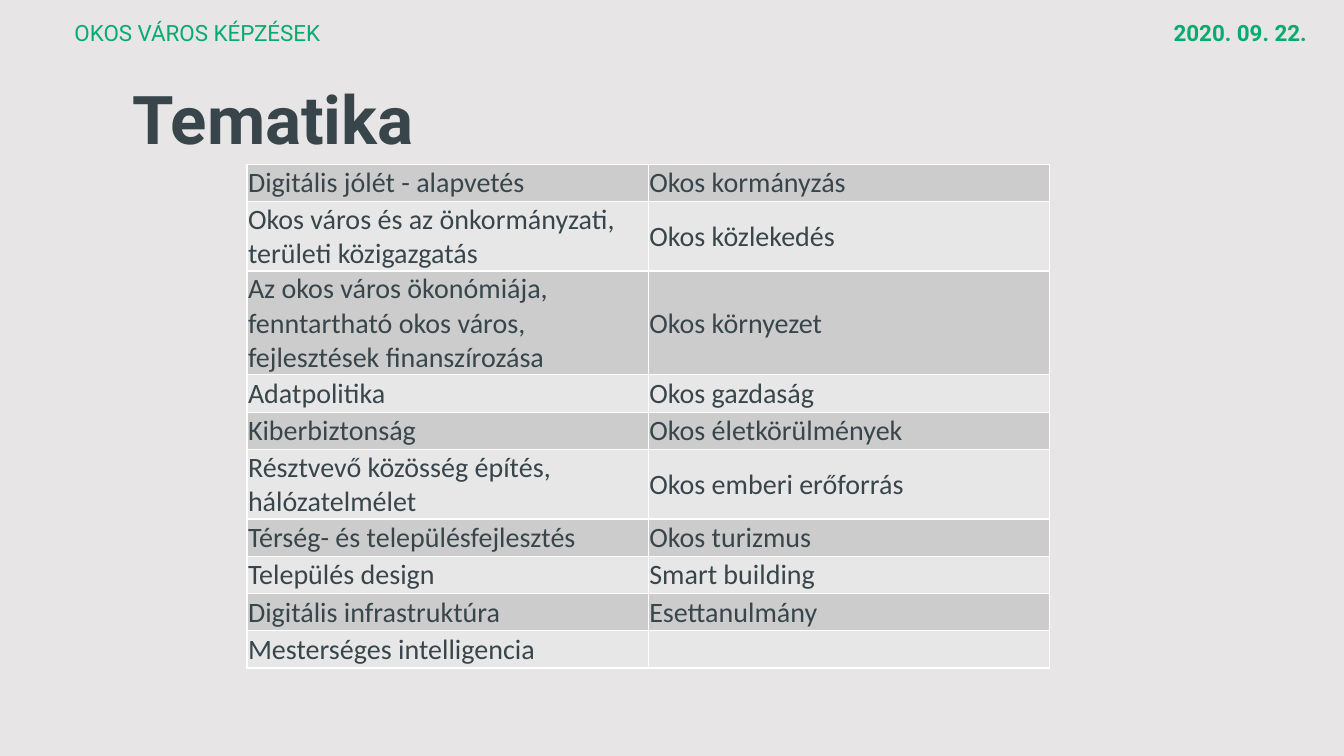
"""Build the course topics slide of the smart city training."""
import pptx
import pptx.dml.color
import pptx.enum.text
import pptx.oxml.xmlchemy
import pptx.util
from lxml import etree
from pptx.oxml import ns

PX = 9144
GREEN = pptx.dml.color.RGBColor(0x06, 0xAB, 0x71)
SLATE = pptx.dml.color.RGBColor(0x38, 0x46, 0x4C)
BACKDROP = pptx.dml.color.RGBColor(0xE7, 0xE5, 0xE5)
WHITE = pptx.dml.color.RGBColor(0xFF, 0xFF, 0xFF)
BANDS = (
    pptx.dml.color.RGBColor(0xCC, 0xCC, 0xCC),
    pptx.dml.color.RGBColor(0xE7, 0xE7, 0xE7),
)
ALIGN = pptx.enum.text.PP_ALIGN
ANCHOR = pptx.enum.text.MSO_ANCHOR

ROW_HEIGHTS = {1: 37, 2: 69, 3: 103}
TOPICS = [
    ("Digitális jólét - alapvetés", "Okos kormányzás", 1),
    ("Okos város és az önkormányzati, területi közigazgatás", "Okos közlekedés", 2),
    ("Az okos város ökonómiája, fenntartható okos város, fejlesztések finanszírozása",
     "Okos környezet", 3),
    ("Adatpolitika", "Okos gazdaság", 1),
    ("Kiberbiztonság", "Okos életkörülmények", 1),
    ("Résztvevő közösség építés, hálózatelmélet", "Okos emberi erőforrás", 2),
    ("Térség- és településfejlesztés", "Okos turizmus", 1),
    ("Település design", "Smart building", 1),
    ("Digitális infrastruktúra", "Esettanulmány", 1),
    ("Mesterséges intelligencia", "", 1),
]


def px(length):
    return pptx.util.Emu(length * PX)


def write(frame, text, *, size, color, font="Roboto", bold=False, align=ALIGN.LEFT):
    frame.word_wrap = True
    paragraph = frame.paragraphs[0]
    paragraph.alignment = align
    if text:
        run = paragraph.add_run()
        run.text = text
        run.font.name = font
        run.font.size = pptx.util.Pt(size)
        run.font.bold = bold
        run.font.color.rgb = color
    return paragraph


def add_title(slide, text):
    title = slide.shapes.title
    title.left, title.top, title.width, title.height = map(px, (92, 78, 1150, 85))
    title.text_frame.auto_size = pptx.enum.text.MSO_AUTO_SIZE.NONE
    title.text_frame.vertical_anchor = ANCHOR.BOTTOM
    heading = write(title.text_frame, text, size=48, color=SLATE, bold=True)
    heading.line_spacing = 0.9
    properties = heading._p.get_or_add_pPr()
    properties.set("marL", str(px(29)))
    properties.set("indent", "0")


def add_header(slide, text, left, width, **text_format):
    header = slide.shapes.add_textbox(px(left), px(14), px(width), px(40))
    write(header.text_frame, text, size=16, color=GREEN, **text_format)


def add_borders(cell):
    properties = cell._tc.get_or_add_tcPr()
    for position, side in enumerate(("lnL", "lnR", "lnT", "lnB")):
        border = etree.Element(ns.qn(f"a:{side}"), w=str(pptx.util.Pt(1)))
        fill = etree.SubElement(border, ns.qn("a:solidFill"))
        etree.SubElement(fill, ns.qn("a:srgbClr"), val=str(WHITE))
        properties.insert(position, border)


def fill_cell(cell, text, band):
    cell.margin_left = cell.margin_right = cell.margin_top = px(1)
    cell.margin_bottom = 0
    cell.vertical_anchor = ANCHOR.MIDDLE
    cell.fill.solid()
    cell.fill.fore_color.rgb = band
    add_borders(cell)
    write(cell.text_frame, text, size=20, color=SLATE, font="Calibri")


def add_topics(slide):
    heights = [ROW_HEIGHTS[lines] for *_, lines in TOPICS]
    topics = slide.shapes.add_table(
        len(TOPICS), 2, px(245), px(163), px(796), px(sum(heights))
    ).table
    topics.first_row = topics.horz_banding = False
    for column in topics.columns:
        column.width = px(398)
    for row, (*names, _) in enumerate(TOPICS):
        topics.rows[row].height = px(heights[row])
        for column, name in enumerate(names):
            fill_cell(topics.cell(row, column), name, BANDS[row % 2])


def main():
    deck = pptx.Presentation()
    deck.slide_width, deck.slide_height = px(1333), px(750)
    slide = deck.slides.add_slide(deck.slide_layouts[5])
    slide.background.fill.solid()
    slide.background.fill.fore_color.rgb = BACKDROP
    add_title(slide, "Tematika")
    add_header(slide, "2020. 09. 22.", 1006, 300, bold=True, align=ALIGN.RIGHT)
    add_header(slide, "OKOS VÁROS KÉPZÉSEK", 64, 928)
    add_topics(slide)
    deck.save("out.pptx")


if __name__ == "__main__":
    main()
